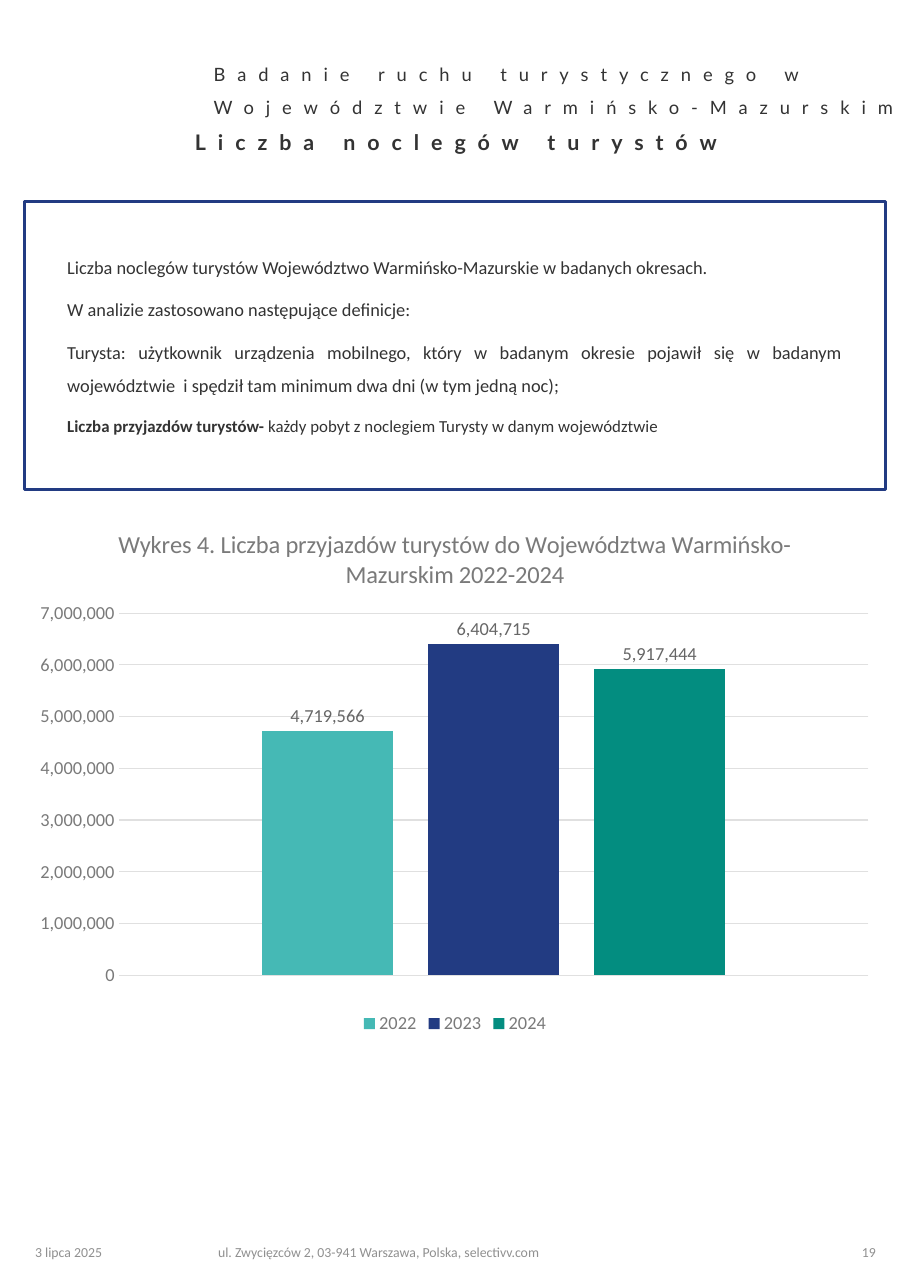
import pptx
import pptx.chart.data
import pptx.dml.color
import pptx.enum.chart
import pptx.enum.shapes
import pptx.enum.text
import pptx.oxml
import pptx.oxml.ns
import pptx.util

Pt = pptx.util.Pt
Align = pptx.enum.text.PP_ALIGN
Anchor = pptx.enum.text.MSO_ANCHOR
HEX = {
    "ink": "333333", "foot": "909090", "axis": "7A7A7A", "label": "666666",
    "grid": "E0E0E0", "teal": "45B9B5", "navy": "223B82", "green": "038D80",
}
LEFT, WIDTH = 15.84, 563.04
COUNTS = [("2022", 4719566, "teal"), ("2023", 6404715, "navy"), ("2024", 5917444, "green")]


def color(name):
    return pptx.dml.color.RGBColor.from_string(HEX[name])


def style(font, size, name, face="Calibri", bold=False):
    font.size = Pt(size)
    font.name = face
    font.bold = bold
    font.color.rgb = color(name)


def paint(fill, name):
    fill.solid()
    fill.fore_color.rgb = color(name)


def set_frame(frame, anchor, insets=None):
    frame.word_wrap = True
    frame.vertical_anchor = anchor
    if insets:
        (frame.margin_left, frame.margin_top,
         frame.margin_right, frame.margin_bottom) = map(Pt, insets)


def add_run(para, text, size, name, face="Calibri", bold=False, track=0):
    run = para.add_run()
    run.text = text
    style(run.font, size, name, face, bold)
    if track:
        run._r.get_or_add_rPr().set("spc", str(round(track * 100)))


def add_head(slide, text, box, size, anchor, bold=False):
    frame = slide.shapes.add_textbox(*map(Pt, box)).text_frame
    set_frame(frame, anchor, (0, 0, 0, 0))
    para = frame.paragraphs[0]
    para.line_spacing = 1.5
    add_run(para, text, size, "ink", "Lato", bold, track=7.8)


def add_foot(slide, text, left, width, align):
    frame = slide.shapes.add_textbox(Pt(left), Pt(802.8), Pt(width), Pt(30.6)).text_frame
    set_frame(frame, Anchor.MIDDLE)
    para = frame.paragraphs[0]
    para.alignment = align
    add_run(para, text, 9, "foot")


def add_panel(slide, paras):
    box = slide.shapes.add_shape(pptx.enum.shapes.MSO_SHAPE.RECTANGLE,
                                 Pt(LEFT), Pt(131.8), Pt(WIDTH), Pt(187.9))
    box.shadow.inherit = False
    box.fill.background()
    box.line.color.rgb = color("navy")
    box.line.width = Pt(2)
    frame = box.text_frame
    set_frame(frame, Anchor.TOP, (28.1, 28.1, 28.1, 14.4))
    for i, (align, runs) in enumerate(paras):
        para = frame.add_paragraph() if i else frame.paragraphs[0]
        para.alignment = align
        para.line_spacing = 1.5
        if i:
            para.space_before = Pt(6.2)
        for text, size, bold in runs:
            add_run(para, text, size, "ink", bold=bold)


def place_plot(chart, x, y, w, h):
    area = chart._chartSpace.chart.plotArea
    for old in area.findall(pptx.oxml.ns.qn("c:layout")):
        area.remove(old)
    parts = "".join(f'<c:{tag} val="{val}"/>' for tag, val in (
        ("layoutTarget", "inner"), ("xMode", "edge"), ("yMode", "edge"),
        ("x", x), ("y", y), ("w", w), ("h", h)))
    area.insert(0, pptx.oxml.parse_xml(
        f'<c:layout {pptx.oxml.ns.nsdecls("c")}><c:manualLayout>{parts}'
        '</c:manualLayout></c:layout>'))


def add_bars(slide, title, counts):
    kinds = pptx.enum.chart
    data = pptx.chart.data.CategoryChartData(number_format="#,##0")
    data.categories = ["1"]
    for year, count, _ in counts:
        data.add_series(year, [count])
    chart = slide.shapes.add_chart(kinds.XL_CHART_TYPE.COLUMN_CLUSTERED, Pt(LEFT), Pt(331.2),
                                   Pt(WIDTH), Pt(347.8), data).chart
    style(chart.font, 10, "ink")

    # Title and legend
    chart.has_title = True
    add_run(chart.chart_title.text_frame.paragraphs[0], title, 16, "axis")
    chart.chart_title.include_in_layout = False
    chart.has_legend = True
    chart.legend.position = kinds.XL_LEGEND_POSITION.BOTTOM
    chart.legend.include_in_layout = False
    style(chart.legend.font, 12, "axis")

    # Axes
    chart.category_axis.visible = False
    axis = chart.value_axis
    axis.minimum_scale, axis.maximum_scale, axis.major_unit = 0, 7000000, 1000000
    axis.major_tick_mark = axis.minor_tick_mark = kinds.XL_TICK_MARK.NONE
    axis.format.line.fill.background()
    axis.major_gridlines.format.line.color.rgb = color("grid")
    axis.major_gridlines.format.line.width = Pt(0.75)
    axis.tick_labels.number_format = "#,##0"
    axis.tick_labels.number_format_is_linked = False
    style(axis.tick_labels.font, 12, "axis")

    # Bars and labels
    plot = chart.plots[0]
    plot.vary_by_categories = False
    plot.gap_width, plot.overlap = 219, -27
    for bar, (_, _, name) in zip(plot.series, counts):
        paint(bar.format.fill, name)
        labels = bar.data_labels
        labels.show_value = True
        labels.position = kinds.XL_LABEL_POSITION.OUTSIDE_END
        labels.number_format = "#,##0"
        labels.number_format_is_linked = False
        style(labels.font, 12, "label")
    place_plot(chart, 0.11, 0.2, 0.87, 0.68)


def main():
    deck = pptx.Presentation()
    deck.slide_width, deck.slide_height = Pt(595.44), Pt(841.68)
    slide = deck.slides.add_slide(deck.slide_layouts[6])

    # Headings
    add_head(slide, "Badanie ruchu turystycznego w Województwie Warmińsko-Mazurskim",
             (139.7, 28.8, 451.4, 48.2), 12, Anchor.BOTTOM)
    add_head(slide, "Liczba noclegów turystów",
             (127.4, 76.3, 451.4, 48.2), 14, Anchor.TOP, bold=True)

    # Definitions
    add_panel(slide, [
        (Align.JUSTIFY, [("Liczba noclegów turystów Województwo Warmińsko-Mazurskie "
                          "w badanych okresach.", 12, False)]),
        (Align.JUSTIFY, [("W analizie zastosowano następujące definicje:", 12, False)]),
        (Align.JUSTIFY, [("Turysta: użytkownik urządzenia mobilnego, który w badanym okresie "
                          "pojawił się w badanym województwie  i spędził tam minimum dwa dni "
                          "(w tym jedną noc);", 12, False)]),
        (Align.LEFT, [("Liczba przyjazdów turystów- ", 11, True),
                      ("każdy pobyt z noclegiem Turysty w danym województwie", 11, False)]),
    ])

    # Chart
    add_bars(slide, "Wykres 4. Liczba przyjazdów turystów do Województwa "
                    "Warmińsko-Mazurskim 2022-2024", COUNTS)

    # Footer
    add_foot(slide, "3 lipca 2025", LEFT, 78.5, Align.LEFT)
    add_foot(slide, "ul. Zwycięzców 2, 03-941 Warszawa, Polska, selectivv.com",
             110.9, 272.9, Align.CENTER)
    add_foot(slide, "19", 538.6, 41, Align.RIGHT)

    deck.save("out.pptx")


if __name__ == "__main__":
    main()
